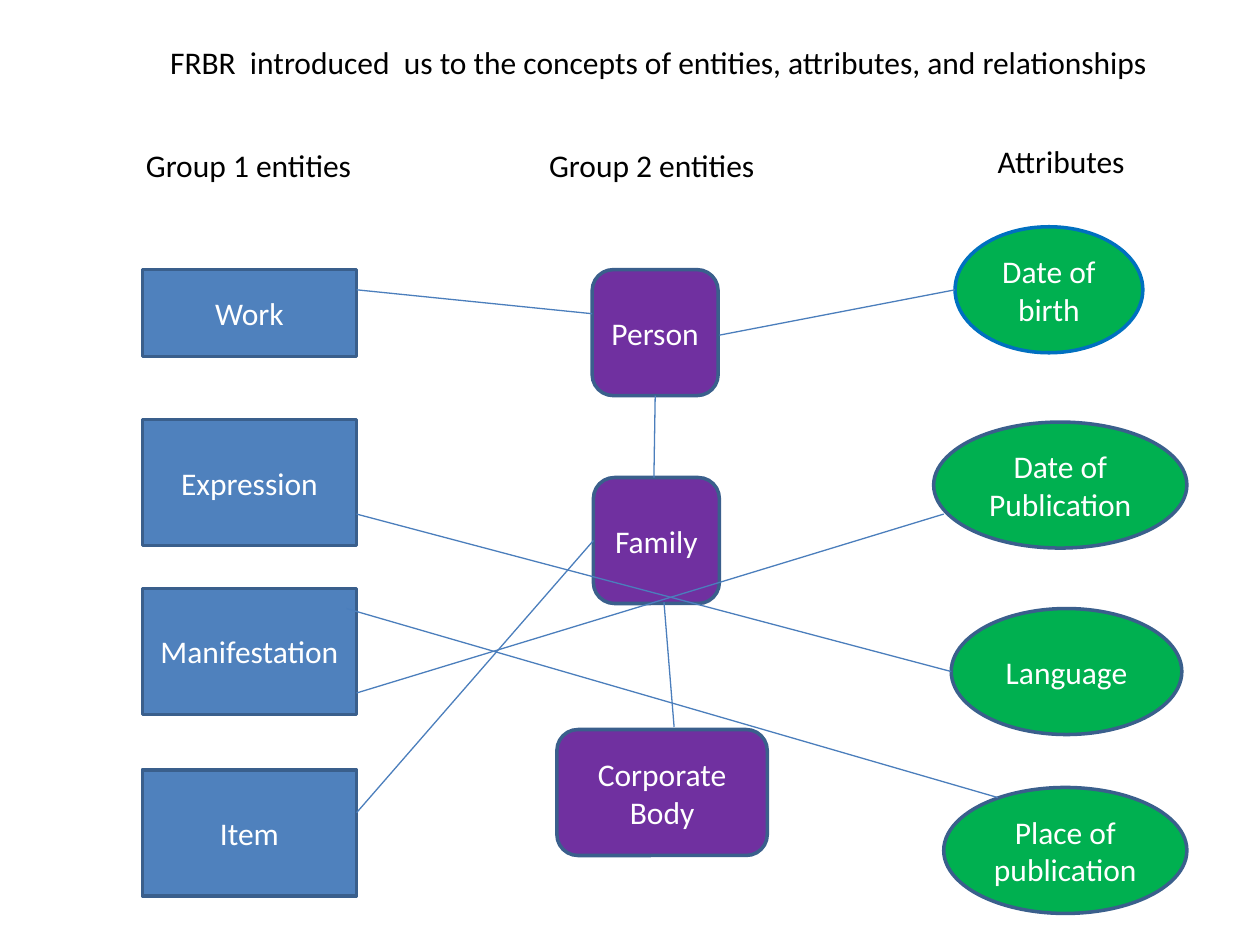
import pptx
import pptx.util
from pptx.dml.color import RGBColor
from pptx.enum.shapes import MSO_CONNECTOR, MSO_SHAPE
from pptx.enum.text import MSO_ANCHOR, MSO_AUTO_SIZE, PP_ALIGN
from pptx.oxml.ns import qn
from pptx.util import Inches
import lxml.etree

# Content: positions and sizes in inches
TITLE = ("FRBR  introduced  us to the concepts of entities, attributes, and relationships",
         (1.25, 0.29, 8, 0.4))
HEADINGS = [
    ("Group 1 entities", (1.06, 1.11, 1.85, 0.4)),
    ("Group 2 entities", (4.26, 1.11, 1.85, 0.4)),
    ("Attributes", (7.82, 1.08, 1.22, 0.4)),
]
GROUP_1 = [  # text, top, height
    ("Work", 2.14, 0.69),
    ("Expression", 3.33, 1),
    ("Manifestation", 4.67, 1),
    ("Item", 6.11, 1),
]
GROUP_2 = [  # text, left, top, width
    ("Person", 4.7, 2.14, 1),
    ("Family", 4.71, 3.79, 1),
    ("Corporate Body", 4.42, 5.79, 1.67),
]
ATTRIBUTES = [  # text, left, top, width, outline
    ("Date of birth", 7.58, 1.8, 1.49, "highlight"),
    ("Date of Publication", 7.41, 3.35, 2.01, "outline"),
    ("Language", 7.55, 4.83, 1.83, "outline"),
    ("Place of publication", 7.49, 6.25, 1.93, "outline"),
]
RELATIONSHIPS = [  # start, end
    ((2.83, 4.08), (7.55, 5.33)),  # Expression to Language
    ((2.83, 5.5), (7.49, 4.08)),   # Manifestation to Date of Publication
    ((2.83, 2.3), (4.7, 2.49)),    # Work to Person
    ((7.58, 2.3), (5.71, 2.66)),   # Date of birth to Person
    ((2.75, 4.83), (7.92, 6.33)),  # Manifestation to Place of publication
    ((2.83, 6.45), (4.71, 4.29)),  # Item to Family
    ((5.2, 3.14), (5.19, 3.79)),   # Person to Family
    ((5.27, 4.78), (5.35, 5.77)),  # Family to Corporate Body
]
GROUP_1_LEFT, GROUP_1_WIDTH, NODE_HEIGHT = 1.13, 1.7, 1

THEME = {
    "font": "Calibri", "size": 18, "node_line": 2, "link_line": 0.75,
    "text": "000000", "node_text": "FFFFFF",
    "group_1": "4F81BD", "group_2": "7030A0", "attribute": "00B050",
    "outline": "3A5F8C", "highlight": "0070C0", "link": "4B7EBC",
}


def color(name):
    return RGBColor.from_string(THEME[name])


def write(shape, text, text_color="text", align=PP_ALIGN.LEFT,
          anchor=MSO_ANCHOR.TOP, wrap=False, auto_size=MSO_AUTO_SIZE.NONE):
    frame = shape.text_frame
    frame.word_wrap = wrap
    frame.auto_size = auto_size
    frame.vertical_anchor = anchor
    paragraph = frame.paragraphs[0]
    paragraph.alignment = align
    run = paragraph.add_run()
    run.text = text
    run.font.name = THEME["font"]
    run.font.size = pptx.util.Pt(THEME["size"])
    run.font.color.rgb = color(text_color)


def add_node(slide, kind, text, box, fill, outline="outline"):
    shape = slide.shapes.add_shape(kind, *map(Inches, box))
    shape.shadow.inherit = False
    shape.fill.solid()
    shape.fill.fore_color.rgb = color(fill)
    shape.line.color.rgb = color(outline)
    shape.line.width = pptx.util.Pt(THEME["node_line"])
    write(shape, text, text_color="node_text", align=PP_ALIGN.CENTER,
          anchor=MSO_ANCHOR.MIDDLE, wrap=True)


def add_link(slide, start, end):
    connector = slide.shapes.add_connector(
        MSO_CONNECTOR.STRAIGHT, *map(Inches, start + end))
    connector.line.color.rgb = color("link")
    connector.line.width = pptx.util.Pt(THEME["link_line"])
    properties = connector._element.find(qn("p:spPr"))
    lxml.etree.SubElement(properties, qn("a:effectLst"))


def main():
    presentation = pptx.Presentation()
    presentation.slide_width, presentation.slide_height = Inches(10), Inches(7.5)
    slide = presentation.slides.add_slide(presentation.slide_layouts[5])

    # Title and column headings
    text, box = TITLE
    title = slide.shapes.title
    title.left, title.top, title.width, title.height = map(Inches, box)
    write(title, text, auto_size=MSO_AUTO_SIZE.SHAPE_TO_FIT_TEXT)
    for text, box in HEADINGS:
        heading = slide.shapes.add_textbox(*map(Inches, box))
        write(heading, text, auto_size=MSO_AUTO_SIZE.SHAPE_TO_FIT_TEXT)

    # Entities and attributes
    for text, top, height in GROUP_1:
        add_node(slide, MSO_SHAPE.RECTANGLE, text,
                 (GROUP_1_LEFT, top, GROUP_1_WIDTH, height), "group_1")
    for text, left, top, width, outline in ATTRIBUTES:
        add_node(slide, MSO_SHAPE.OVAL, text,
                 (left, top, width, NODE_HEIGHT), "attribute", outline)
    for text, left, top, width in GROUP_2:
        add_node(slide, MSO_SHAPE.ROUNDED_RECTANGLE, text,
                 (left, top, width, NODE_HEIGHT), "group_2")

    # Relationships
    for start, end in RELATIONSHIPS:
        add_link(slide, start, end)

    presentation.save("out.pptx")


if __name__ == "__main__":
    main()
